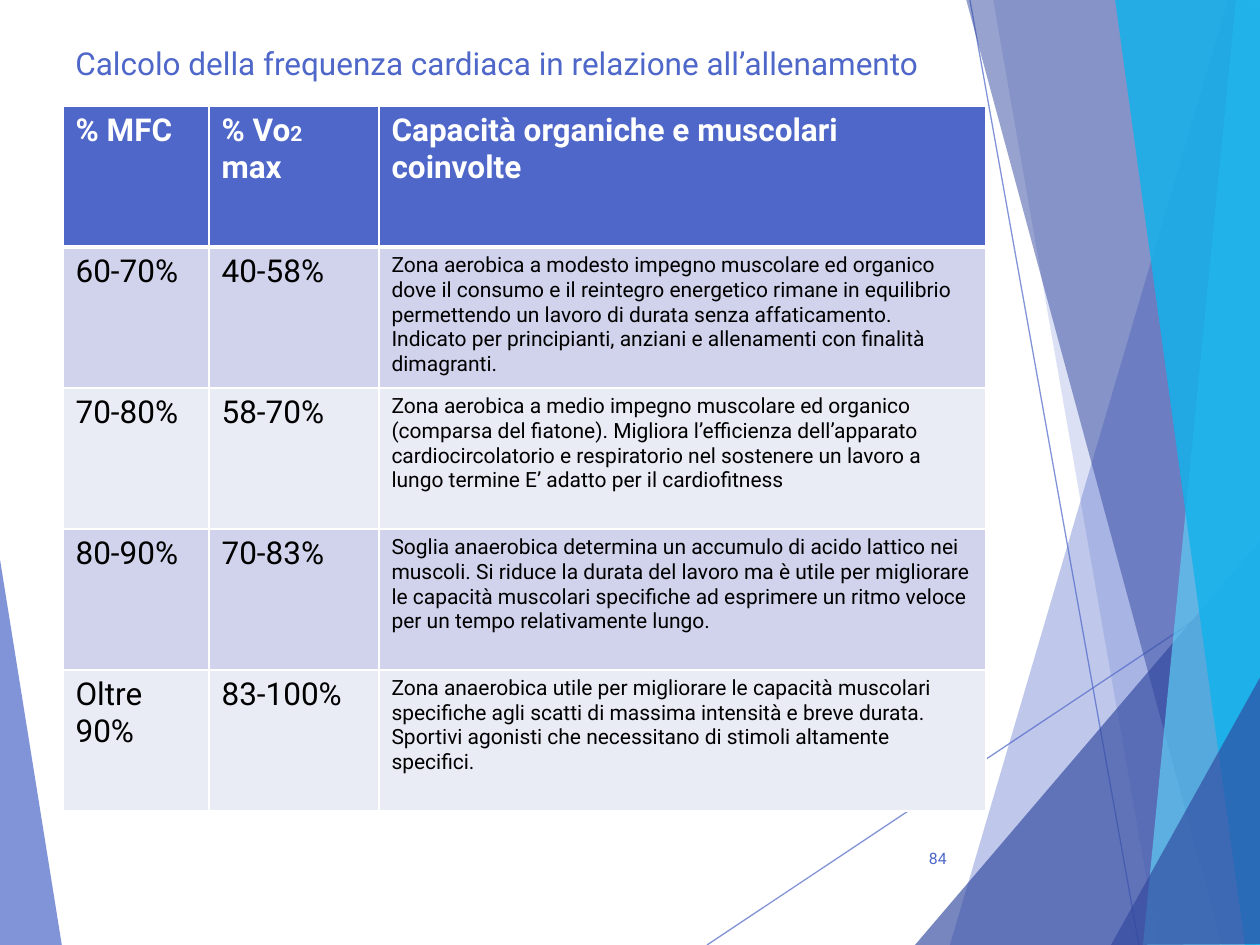
from pptx import Presentation, util as u
from pptx.dml.color import RGBColor
from pptx.enum import shapes, text
from pptx.oxml import parse_xml
from pptx.oxml.ns import nsdecls, qn

PX = u.Inches(1) / 126
FONT = "Roboto"
BLUE, NAVY, WHITE, BLACK = "4E67C8", "31489F", "FFFFFF", "000000"
BANDS = ("D0D3EB", "E9EBF5")

LEFT_WEDGE = ([(-1, 553), (62, 946), (-1, 945)], BLUE, 70)
RIGHT_FACETS = [
    ([(1228, 0), (950, 945), (1262, 946), (1261, 1)], BLUE, 36),
    ([(993, -1), (1158, 945), (1261, 945), (1261, -1)], BLUE, 20),
    ([(915, 945), (1260, 541), (1261, 945)], NAVY, 66),
    ([(966, -1), (1222, 945), (1261, 944), (1261, -1)], NAVY, 50),
    ([(1236, -1), (1143, 945), (1261, 945), (1260, -1)], "5ECCF3", 70),
    ([(1115, -1), (1245, 945), (1262, 945), (1260, -1)], "12B2EB", 82),
    ([(1111, 945), (1262, 674), (1262, 944)], NAVY, 66),
]
RAYS = [(707, 945, 1261, 576), (970, 0, 1139, 945)]

HEADER = [
    [[("% MFC", 18)]],
    [[("% Vo", 18), ("2", 12), (" max", 18)]],
    [[("Capacità organiche e muscolari coinvolte", 18)]],
]
ZONES = [
    ("60-70%", "40-58%", [
        "Zona aerobica a modesto impegno muscolare ed organico dove il consumo e il "
        "reintegro energetico rimane in equilibrio permettendo un lavoro di durata "
        "senza affaticamento.",
        "Indicato per principianti, anziani e allenamenti con finalità dimagranti."]),
    ("70-80%", "58-70%", [
        "Zona aerobica a medio impegno muscolare ed organico (comparsa del fiatone). "
        "Migliora l’efficienza dell’apparato cardiocircolatorio e respiratorio nel "
        "sostenere un lavoro a lungo termine E’ adatto per il cardiofitness"]),
    ("80-90%", "70-83%", [
        "Soglia anaerobica determina un accumulo di acido lattico nei muscoli. Si "
        "riduce la durata del lavoro ma è utile per migliorare le capacità muscolari "
        "specifiche ad esprimere un ritmo veloce per un tempo relativamente lungo."]),
    ("Oltre 90%", "83-100%", [
        "Zona anaerobica utile per migliorare le capacità muscolari specifiche agli "
        "scatti di massima intensità e breve durata. Sportivi agonisti che necessitano "
        "di stimoli altamente specifici."]),
]


def px(n):
    return u.Emu(round(n * PX))


def color(hex_string):
    return RGBColor.from_string(hex_string)


def set_alpha(fill_owner, percent):
    """Make every solid colour under the element partly transparent."""
    for clr in fill_owner.iter(qn("a:srgbClr")):
        clr.append(parse_xml(f'<a:alpha {nsdecls("a")} val="{percent * 1000}"/>'))


def add_runs(p, runs, hex_string, bold=False):
    for words, size in runs:
        r = p.add_run()
        r.text = words
        r.font.name, r.font.size, r.font.bold = FONT, u.Pt(size), bold
        r.font.color.rgb = color(hex_string)


def text_box(s, box, words, size, align, anchor):
    tf = s.shapes.add_textbox(*map(px, box)).text_frame
    tf.word_wrap = True
    tf.vertical_anchor = anchor
    tf.paragraphs[0].alignment = align
    add_runs(tf.paragraphs[0], [(words, size)], BLUE)


def facet(s, x, y, points, hex_string, percent):
    pts = [(x + a, y + b) for a, b in points]
    fb = s.shapes.build_freeform(*pts[0], scale=PX)
    fb.add_line_segments(pts[1:], close=True)
    sp = fb.convert_to_shape()
    sp.shadow.inherit = False
    sp.fill.solid()
    sp.fill.fore_color.rgb = color(hex_string)
    sp.line.fill.background()
    set_alpha(sp.fill._xPr, percent)


def ray(s, x, y, x1, y1, x2, y2):
    line = s.shapes.add_connector(shapes.MSO_CONNECTOR.STRAIGHT, px(x + x1), px(y + y1),
                                  px(x + x2), px(y + y2))
    line.line.color.rgb = color(BLUE)
    line.line.width = u.Pt(0.75)
    sp_pr = line._element.spPr
    set_alpha(sp_pr, 70)
    sp_pr.append(parse_xml(f'<a:effectLst {nsdecls("a")}/>'))


def backdrop(s, x, y):
    facet(s, x, y, *LEFT_WEDGE)
    for ends in RAYS:
        ray(s, x, y, *ends)
    for shape in RIGHT_FACETS:
        facet(s, x, y, *shape)


def style_cell(cell, fill, top, bottom):
    """Draw white borders, then fill; the schema wants them in that order."""
    tc_pr = cell._tc.get_or_add_tcPr()
    for side, width in (("L", 1), ("R", 1), ("T", top), ("B", bottom)):
        tc_pr.append(parse_xml(
            f'<a:ln{side} {nsdecls("a")} w="{u.Pt(width)}"><a:solidFill>'
            f'<a:srgbClr val="{WHITE}"/></a:solidFill></a:ln{side}>'))
    cell.fill.solid()
    cell.fill.fore_color.rgb = color(fill)


def zone_table(s, x, y, widths, row_height):
    rows = [HEADER] + [
        [[[(mfc, 18)]], [[(vo2, 18)]], [[(words, 12)] for words in notes]]
        for mfc, vo2, notes in ZONES]
    frame = s.shapes.add_table(len(rows), len(widths), px(x), px(y), px(sum(widths)),
                               px(row_height * len(rows)))
    table = frame.table
    for column, width in zip(table.columns, widths):
        column.width = px(width)
    for i, row in enumerate(rows):
        table.rows[i].height = px(row_height)
        head = i == 0
        for j, paragraphs in enumerate(row):
            cell = table.cell(i, j)
            style_cell(cell, BLUE if head else BANDS[(i - 1) % 2],
                       3 if i == 1 else 1, 3 if head else 1)
            tf = cell.text_frame
            for k, runs in enumerate(paragraphs):
                p = tf.add_paragraph() if k else tf.paragraphs[0]
                add_runs(p, runs, WHITE if head else BLACK, head)


def main():
    prs = Presentation()
    prs.slide_width, prs.slide_height = px(1260), px(945)
    s = prs.slides.add_slide(prs.slide_layouts[6])
    backdrop(s, 0, 0)
    text_box(s, (63, 38, 924, 68),
             "Calcolo della frequenza cardiaca in relazione all’allenamento", 18,
             text.PP_ALIGN.LEFT, text.MSO_ANCHOR.TOP)
    zone_table(s, 63, 106, (146, 170, 607), 141)
    text_box(s, (888, 833, 71, 50), "84", 9,
             text.PP_ALIGN.RIGHT, text.MSO_ANCHOR.MIDDLE)
    prs.save("out.pptx")


if __name__ == "__main__":
    main()
